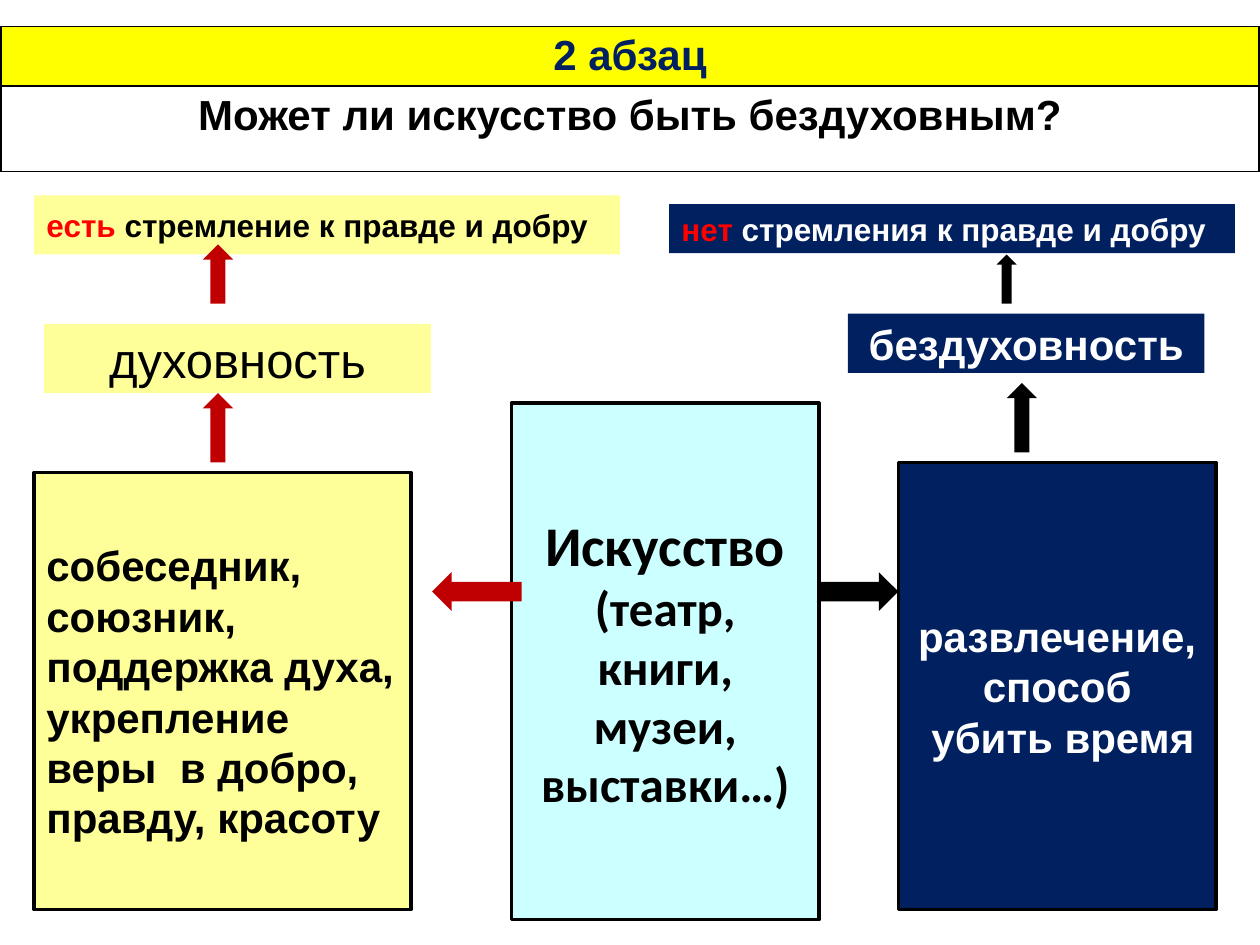
import dataclasses

import pptx
import pptx.dml.color
import pptx.enum.shapes
import pptx.enum.text
import pptx.oxml
import pptx.oxml.ns
import pptx.util

Inches = pptx.util.Inches
Align = pptx.enum.text.PP_ALIGN
Shape = pptx.enum.shapes.MSO_SHAPE


@dataclasses.dataclass(frozen=True)
class Theme:
    black: str = "000000"
    white: str = "FFFFFF"
    navy: str = "002060"
    cream: str = "FFFF99"
    cyan: str = "CCFFFF"
    yellow: str = "FFFF00"
    red: str = "FF0000"
    dark_red: str = "C00000"
    font: str = "Arial"
    center_font: str = "Calibri"
    small: int = 18
    body: int = 24
    large: int = 28
    heading: int = 32
    outline: float = 2


THEME = Theme()


def rgb(color):
    return pptx.dml.color.RGBColor.from_string(color)


@dataclasses.dataclass
class Run:
    text: str
    size: int
    color: str = THEME.black
    font: str = THEME.font
    bold: bool = True


class SlideBuilder:
    def __init__(self, slide, theme):
        self.slide = slide
        self.theme = theme

    def add_text(self, text_frame, paragraphs, align):
        """Fill a text frame; each paragraph is a list of runs."""
        for index, runs in enumerate(paragraphs):
            paragraph = text_frame.add_paragraph() if index else text_frame.paragraphs[0]
            paragraph.alignment = align
            for item in runs:
                run = paragraph.add_run()
                run.text = item.text
                run.font.name = item.font
                run.font.size = pptx.util.Pt(item.size)
                run.font.bold = item.bold
                run.font.color.rgb = rgb(item.color)

    def block(self, kind, box, fill, outlined=False):
        shape = self.slide.shapes.add_shape(kind, *map(Inches, box))
        shape.shadow.inherit = False
        shape.fill.solid()
        shape.fill.fore_color.rgb = rgb(fill)
        if outlined:
            shape.line.color.rgb = rgb(self.theme.black)
            shape.line.width = pptx.util.Pt(self.theme.outline)
        else:
            shape.line.fill.background()
        return shape

    def text_box(self, box, fill, paragraphs, align=Align.CENTER, outlined=False):
        text_frame = self.block(Shape.RECTANGLE, box, fill, outlined).text_frame
        text_frame.word_wrap = True
        text_frame.vertical_anchor = pptx.enum.text.MSO_ANCHOR.MIDDLE
        self.add_text(text_frame, paragraphs, align)

    def border(self, cell, side, points):
        namespace = pptx.oxml.ns.nsdecls("a")
        line = pptx.oxml.parse_xml(
            f'<a:ln{side} {namespace} w="{pptx.util.Pt(points)}"><a:solidFill>'
            f'<a:srgbClr val="{self.theme.black}"/></a:solidFill></a:ln{side}>')
        cell._tc.get_or_add_tcPr().append(line)

    def heading_table(self, box, rows):
        """Draw a one-column table; each row is (height, fill, run)."""
        table = self.slide.shapes.add_table(len(rows), 1, *map(Inches, box)).table
        for index, (height, fill, run) in enumerate(rows):
            table.rows[index].height = Inches(height)
            cell = table.cell(index, 0)
            for side, points in (("L", 2.25), ("R", 2.25), ("T", 1), ("B", 1)):
                self.border(cell, side, points)
            cell.fill.solid()
            cell.fill.fore_color.rgb = rgb(fill)
            self.add_text(cell.text_frame, [[run]], Align.CENTER)


def main():
    presentation = pptx.Presentation()
    presentation.slide_width, presentation.slide_height = Inches(10), Inches(7.5)
    slide = presentation.slides.add_slide(presentation.slide_layouts[6])
    theme = THEME
    builder = SlideBuilder(slide, theme)

    builder.text_box((4.06, 3.2, 2.44, 4.1), theme.cyan, [
        [Run("Искусство", theme.heading, font=theme.center_font)],
        [Run("(театр, книги, музеи, выставки…)", theme.large, font=theme.center_font)],
    ], outlined=True)

    # Labels above the two columns
    builder.text_box((6.73, 2.49, 2.83, 0.47), theme.navy,
                     [[Run("бездуховность", theme.body, theme.white)]])
    builder.text_box((0.35, 2.57, 3.07, 0.55), theme.cream,
                     [[Run("духовность", theme.large, bold=False)]])
    for box, fill, key, rest, color in (
        ((5.31, 1.62, 4.49, 0.39), theme.navy,
         "нет", " стремления к правде и добру", theme.white),
        ((0.27, 1.55, 4.65, 0.47), theme.cream,
         "есть", " стремление к правде и добру", theme.black),
    ):
        builder.text_box(box, fill, [[Run(key, theme.small, theme.red),
                                      Run(rest, theme.small, color)]], Align.LEFT)

    # Columns on either side of the centre
    builder.text_box((7.13, 3.67, 2.52, 3.55), theme.navy, [
        [Run("развлечение, способ", theme.body, theme.white)],
        [Run(" убить время", theme.body, theme.white)],
    ], outlined=True)
    builder.text_box((0.27, 3.75, 2.99, 3.47), theme.cream, [
        [Run("собеседник, союзник, поддержка духа, укрепление "
             "веры  в добро, правду, красоту", theme.body)],
    ], Align.LEFT, outlined=True)

    for kind, box, fill in (
        (Shape.RIGHT_ARROW, (6.5, 4.54, 0.63, 0.31), theme.black),
        (Shape.LEFT_ARROW, (3.43, 4.54, 0.71, 0.31), theme.dark_red),
        (Shape.UP_ARROW, (7.99, 3.04, 0.24, 0.55), theme.black),
        (Shape.UP_ARROW, (7.91, 2.02, 0.16, 0.39), theme.black),
        (Shape.UP_ARROW, (1.61, 3.12, 0.24, 0.55), theme.dark_red),
        (Shape.UP_ARROW, (1.61, 1.94, 0.24, 0.47), theme.dark_red),
    ):
        builder.block(kind, box, fill)

    builder.heading_table((0, 0.21, 10, 1.15), [
        (0.47, theme.yellow, Run("2 абзац", theme.body, theme.navy)),
        (0.68, theme.white, Run("Может ли искусство быть бездуховным?", theme.body)),
    ])
    presentation.save("out.pptx")


if __name__ == "__main__":
    main()
